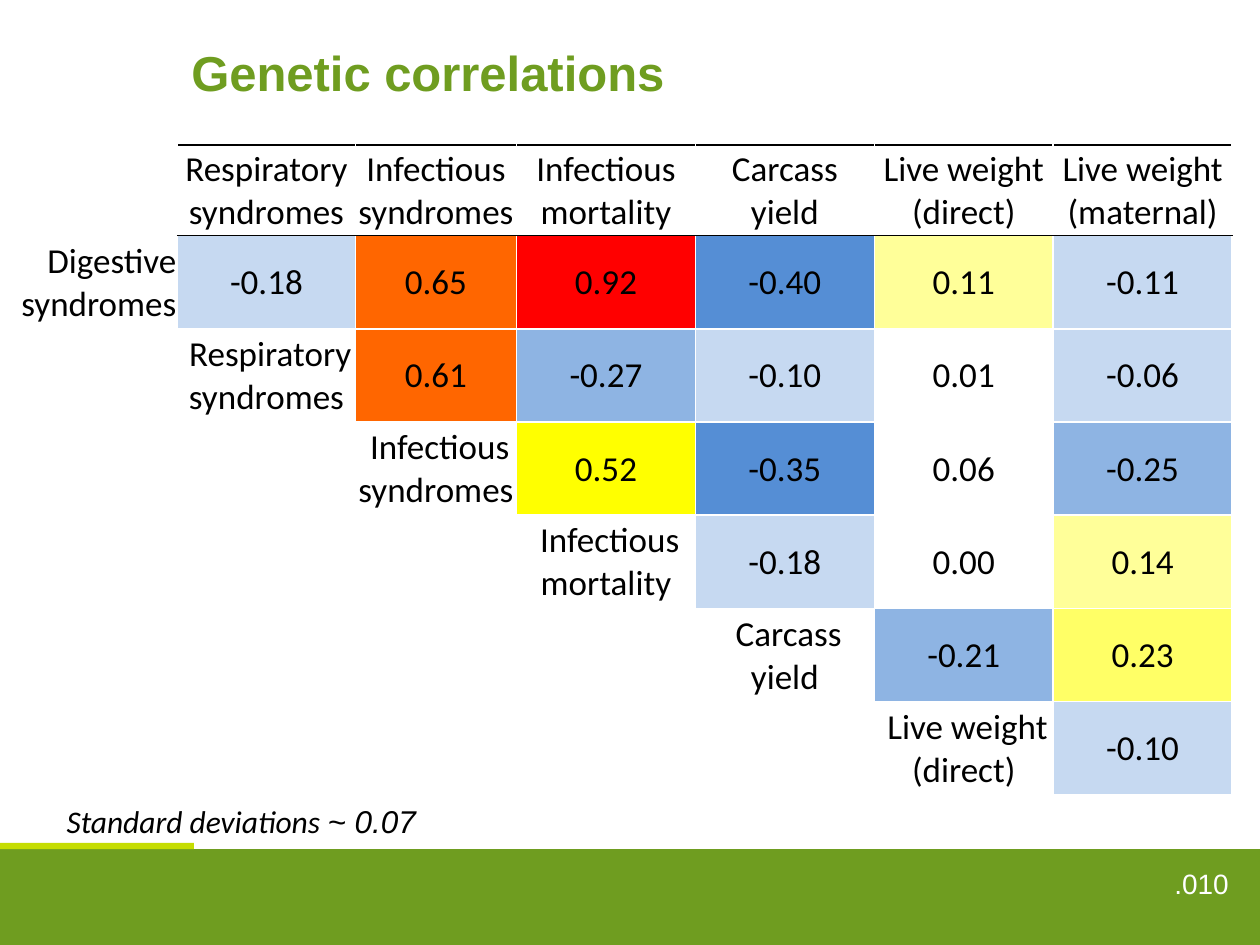
import pptx
import pptx.util
import pptx.enum.text
import pptx.enum.shapes
import pptx.dml.color
import pptx.oxml
import pptx.oxml.ns

Inches, Pt = pptx.util.Inches, pptx.util.Pt
ALIGN = pptx.enum.text.PP_ALIGN
ANCHOR = pptx.enum.text.MSO_ANCHOR

COLORS = {
    "white": "FFFFFF", "black": "000000", "green": "6F9D20", "lime": "C5DD01",
    "red": "FF0000", "orange": "FF6600", "yellow": "FFFF00",
    "lemon": "FFFF66", "cream": "FFFF99",
    "pale": "C6D9F1", "sky": "8EB4E3", "blue": "558ED5",
}

# Lowest value of each colour band, from strongest positive down
BANDS = [(0.9, "red"), (0.6, "orange"), (0.5, "yellow"), (0.2, "lemon"),
         (0.1, "cream"), (-0.05, "white"), (-0.2, "pale"), (-0.3, "sky"),
         (-1, "blue")]

TRAITS = ["Digestive syndromes", "Respiratory syndromes", "Infectious syndromes",
          "Infectious mortality", "Carcass yield", "Live weight (direct)",
          "Live weight (maternal)"]

# Upper triangle: each row starts right of its own trait
VALUES = [
    [-0.18, 0.65, 0.92, -0.40, 0.11, -0.11],
    [0.61, -0.27, -0.10, 0.01, -0.06],
    [0.52, -0.35, 0.06, -0.25],
    [-0.18, 0.00, 0.14],
    [-0.21, 0.23],
    [-0.10],
]


def band(value):
    return next(name for low, name in BANDS if value >= low)


class Deck:
    def __init__(self):
        self.prs = pptx.Presentation()
        self.prs.slide_width, self.prs.slide_height = Inches(10), Inches(7.5)
        self.slide = self.prs.slides.add_slide(self.prs.slide_layouts[6])

    def rgb(self, name):
        return pptx.dml.color.RGBColor.from_string(COLORS[name])

    def paint(self, item, name):
        item.fill.solid()
        item.fill.fore_color.rgb = self.rgb(name)

    def style(self, run, size, color="black", face="Calibri", bold=False, italic=False):
        font = run.font
        font.size, font.name, font.bold, font.italic = Pt(size), face, bold, italic
        font.color.rgb = self.rgb(color)

    def bar(self, left, top, width, height, color):
        shape = self.slide.shapes.add_shape(
            pptx.enum.shapes.MSO_SHAPE.RECTANGLE,
            Inches(left), Inches(top), Inches(width), Inches(height))
        shape.shadow.inherit = False
        self.paint(shape, color)
        shape.line.fill.background()

    def text(self, left, top, width, height, parts, align=ALIGN.LEFT):
        """Parts are pairs of wording and run style."""
        box = self.slide.shapes.add_textbox(
            Inches(left), Inches(top), Inches(width), Inches(height))
        box.text_frame.word_wrap = True
        para = box.text_frame.paragraphs[0]
        para.alignment = align
        for words, look in parts:
            run = para.add_run()
            run.text = words
            self.style(run, **look)

    def edge(self, cell, dark=()):
        """Thin white borders, black on the sides named in dark."""
        props = cell._tc.get_or_add_tcPr()
        for spot, side in enumerate("LRTB"):
            hue = COLORS["black" if side in dark else "white"]
            line = pptx.oxml.parse_xml(
                f'<a:ln{side} {pptx.oxml.ns.nsdecls("a")} w="12700"><a:solidFill>'
                f'<a:srgbClr val="{hue}"/></a:solidFill></a:ln{side}>')
            props.insert(spot, line)

    def cell(self, cell, words, fill="white", align=ALIGN.CENTER, indent=0, dark=()):
        self.paint(cell, fill)
        self.edge(cell, dark)
        cell.vertical_anchor = ANCHOR.MIDDLE
        cell.margin_left = cell.margin_right = cell.margin_top = Inches(0.01)
        cell.margin_bottom = 0
        if not words:
            return
        cell.text_frame.text = words
        para = cell.text_frame.paragraphs[0]
        para.alignment = align
        if indent:
            para._p.get_or_add_pPr().set("indent", str(Inches(indent)))
        self.style(para.runs[0], 20)

    def matrix(self, left, top, widths, heights):
        frame = self.slide.shapes.add_table(
            len(heights), len(widths), Inches(left), Inches(top),
            Inches(sum(widths)), Inches(sum(heights)))
        table = frame.table
        table.first_row = table.horz_banding = False
        for col, width in zip(table.columns, widths):
            col.width = Inches(width)
        for row, height in zip(table.rows, heights):
            row.height = Inches(height)

        # Header row
        for c, trait in enumerate(TRAITS):
            self.cell(table.cell(0, c), trait if c else "", dark="TB" if c else "")

        # Blank lower part, trait on the diagonal, values to its right
        for r, values in enumerate(VALUES):
            for c in range(len(widths)):
                cell = table.cell(r + 1, c)
                if c < r:
                    self.cell(cell, "")
                elif c == r:
                    self.cell(cell, TRAITS[r], indent=0.06 if r else 0,
                              align=ALIGN.CENTER if r else ALIGN.RIGHT)
                else:
                    value = values[c - r - 1]
                    self.cell(cell, f"{value:.2f}", band(value),
                              dark="" if r else "T")


def main():
    deck = Deck()

    # Footer band and page number
    deck.bar(0, 6.74, 10, 0.76, "green")
    deck.bar(0, 6.69, 1.54, 0.05, "lime")
    deck.text(8.62, 6.83, 1.23, 0.27,
              [(".010", dict(size=16, color="white", face="Arial"))], ALIGN.RIGHT)

    # Title
    deck.text(1.42, 0.29, 7.4, 0.57,
              [("Genetic correlations",
                dict(size=28, color="green", face="Arial", bold=True))])

    # Correlation table
    deck.matrix(0, 1.15, [1.41, 1.41, 1.28] + [1.42] * 4, [0.72] + [0.74] * 6)

    # Note under the table
    deck.text(0.43, 6.32, 4.8, 0.4,
              [("Standard deviations ", dict(size=18, italic=True)),
               ("~ 0.07", dict(size=18, face="Arial", italic=True))])

    deck.prs.save("out.pptx")


if __name__ == "__main__":
    main()
